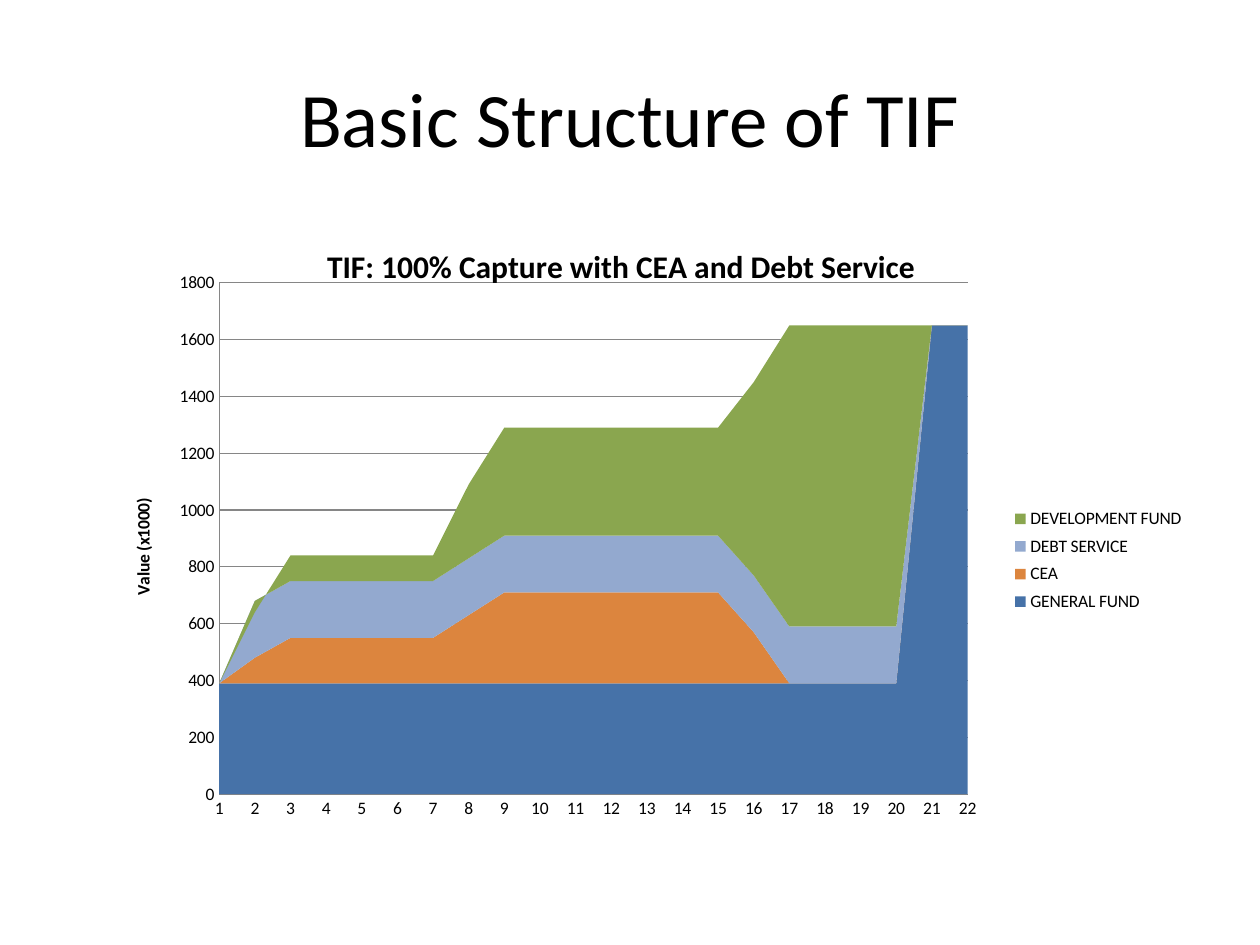
from typing import NamedTuple, Optional

from lxml.etree import SubElement
from pptx import Presentation
from pptx.chart.chart import Chart
from pptx.chart.data import CategoryChartData
from pptx.dml.color import RGBColor
from pptx.enum.chart import XL_CHART_TYPE as ChartType
from pptx.enum.chart import XL_LEGEND_POSITION as LegendPosition
from pptx.enum.chart import XL_TICK_MARK as TickMark
from pptx.enum.text import MSO_ANCHOR as Anchor
from pptx.enum.text import PP_ALIGN as Align
from pptx.oxml.ns import qn
from pptx.util import Inches, Pt

FONT = "Calibri"
BLACK = RGBColor(0x00, 0x00, 0x00)
GREY = RGBColor(0x86, 0x86, 0x86)
BLUE = RGBColor(0x46, 0x72, 0xA8)
ORANGE = RGBColor(0xDC, 0x85, 0x3E)
LIGHT_BLUE = RGBColor(0x93, 0xA9, 0xCF)
GREEN = RGBColor(0x8A, 0xA6, 0x4F)
YEARS = range(1, 23)


class Fund(NamedTuple):
    name: str
    color: RGBColor
    values: list[Optional[int]]


FUNDS = [
    Fund("GENERAL FUND", BLUE, [390] * 20 + [1650] * 2),
    Fund("CEA", ORANGE, [0, 90] + [160] * 5 + [240] + [320] * 7 + [180] + [0] * 6),
    Fund("DEBT SERVICE", LIGHT_BLUE, [0] + [200] * 19 + [0, None]),
    Fund("DEVELOPMENT FUND", GREEN,
         [0, -40] + [90] * 5 + [260] + [380] * 7 + [680] + [1060] * 4 + [0, 0]),
]


def place(part, inner: bool = False, **fractions: float) -> None:
    """Give a chart part a manual layout, in fractions of the chart's size."""
    for old in part.findall(qn("c:layout")):
        part.remove(old)
    layout = SubElement(part, qn("c:layout"))
    overlay = part.find(qn("c:overlay"))
    part.insert(0 if overlay is None else part.index(overlay), layout)
    manual = SubElement(layout, qn("c:manualLayout"))
    settings = {"layoutTarget": "inner"} if inner else {}
    settings |= {"xMode": "edge", "yMode": "edge"} | fractions
    for tag, value in settings.items():
        SubElement(manual, qn(f"c:{tag}")).set("val", str(value))


def write_title(title, text: str, size: int) -> None:
    para = title.text_frame.paragraphs[0]
    para.text = text
    para.font.name, para.font.size, para.font.bold = FONT, Pt(size), True
    para.font.color.rgb = BLACK


def format_axes(chart: Chart) -> None:
    values, categories = chart.value_axis, chart.category_axis
    for axis in (values, categories):
        axis.major_tick_mark = axis.minor_tick_mark = TickMark.NONE
        axis.tick_labels.font.size = Pt(10)
        axis.format.line.color.rgb = GREY
    categories.has_major_gridlines = False
    values.minimum_scale, values.maximum_scale, values.major_unit = 0, 1800, 200
    values.has_major_gridlines = True
    values.major_gridlines.format.line.color.rgb = GREY
    values.major_gridlines.format.line.width = Pt(0.75)
    write_title(values.axis_title, "Value (x1000)", 10)
    title = values.axis_title._element
    title.find(".//" + qn("a:bodyPr")).set("rot", "-5400000")
    place(title, x=0.03, y=0.44)
    values._element.find(qn("c:crossBetween")).set("val", "midCat")


def add_fund_chart(page) -> None:
    data = CategoryChartData()
    data.categories = [str(year) for year in YEARS]
    for fund in FUNDS:
        data.add_series(fund.name, fund.values)
    chart = page.shapes.add_chart(
        ChartType.AREA_STACKED, Inches(0.75), Inches(1.75), Inches(9), Inches(4.95), data
    ).chart
    chart.font.name, chart.font.size = FONT, Pt(10)
    chart.font.color.rgb = BLACK
    for series, fund in zip(chart.plots[0].series, FUNDS):
        series.format.fill.solid()
        series.format.fill.fore_color.rgb = fund.color
        series.format.line.fill.background()
    format_axes(chart)
    place(chart._chartSpace.chart.plotArea, inner=True, x=0.11, y=0.1, w=0.66, h=0.82)
    write_title(chart.chart_title, "TIF: 100% Capture with CEA and Debt Service", 18)
    place(chart.chart_title._element, x=0.2, y=0.03)
    chart.has_legend = True
    chart.legend.position = LegendPosition.RIGHT
    chart.legend.include_in_layout = False
    chart.legend.font.size = Pt(10)
    place(chart.legend._element, x=0.8, y=0.45, w=0.17, h=0.19)


def main() -> None:
    deck = Presentation()
    deck.slide_width, deck.slide_height = Inches(10), Inches(7.5)
    page = deck.slides.add_slide(deck.slide_layouts[5])
    title = page.shapes.title
    title.left, title.top = Inches(0.5), Inches(0.3)
    title.width, title.height = Inches(9), Inches(1.25)
    title.text_frame.vertical_anchor = Anchor.MIDDLE
    para = title.text_frame.paragraphs[0]
    para.text = "Basic Structure of TIF"
    para.alignment = Align.CENTER
    para.font.name, para.font.size = FONT, Pt(44)
    para.font.color.rgb = BLACK
    add_fund_chart(page)
    deck.save("out.pptx")


if __name__ == "__main__":
    main()
